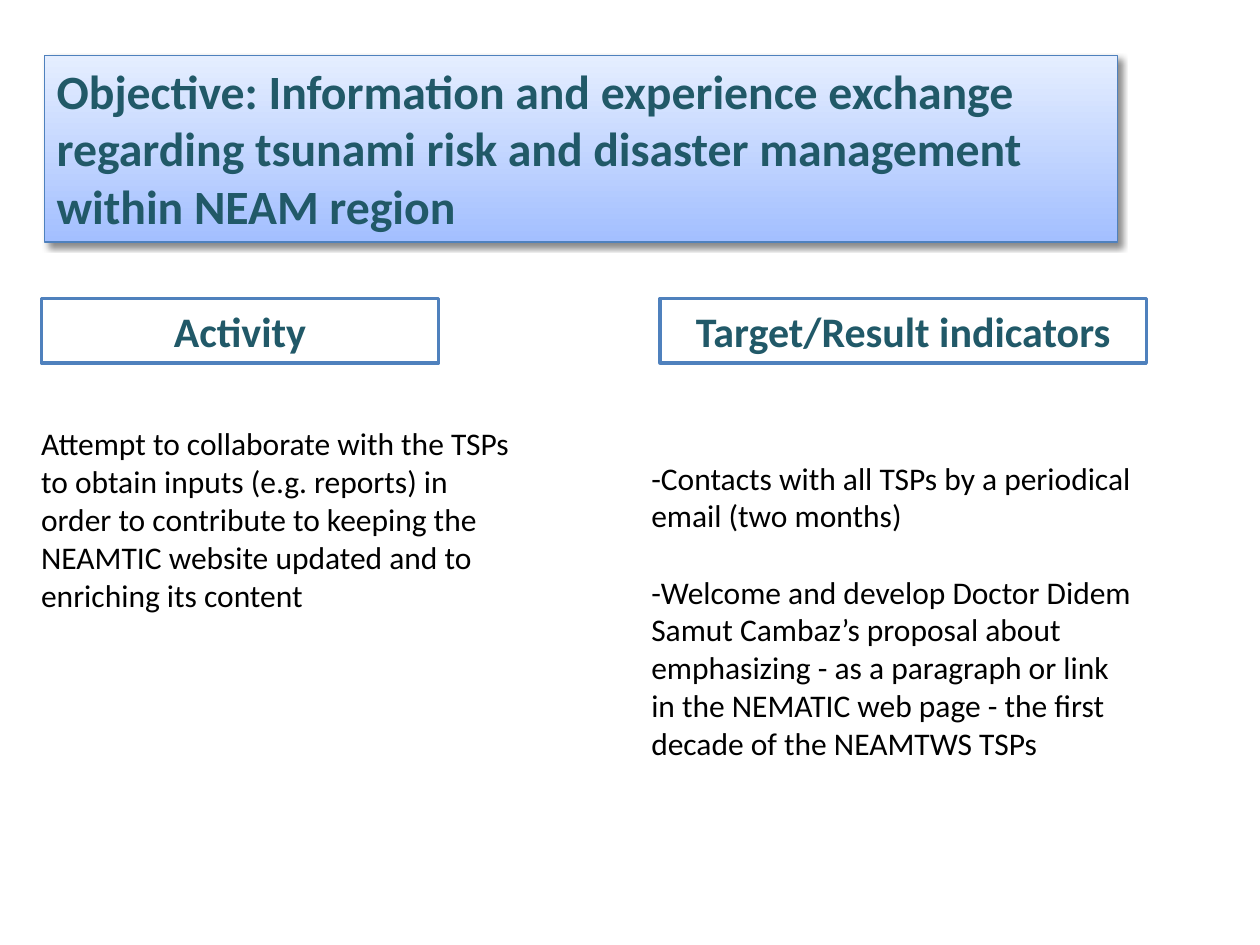
"""Build the objective slide with its activity and target columns."""
from dataclasses import dataclass

from lxml import etree
from pptx import Presentation
from pptx.dml.color import RGBColor
from pptx.enum.shapes import MSO_SHAPE
from pptx.enum.text import MSO_ANCHOR, MSO_AUTO_SIZE, PP_ALIGN
from pptx.oxml import parse_xml
from pptx.util import Cm, Pt

RECTANGLE = MSO_SHAPE.RECTANGLE
TOP = MSO_ANCHOR.TOP
NO_FIT = MSO_AUTO_SIZE.NONE
GROW = MSO_AUTO_SIZE.SHAPE_TO_FIT_TEXT
LEFT = PP_ALIGN.LEFT
CENTER = PP_ALIGN.CENTER
DRAWING = "http://schemas.openxmlformats.org/drawingml/2006/main"


@dataclass(frozen=True)
class Theme:
    font: str = "Calibri"
    teal: RGBColor = RGBColor(0x21, 0x59, 0x68)
    blue: RGBColor = RGBColor(0x4F, 0x81, 0xBD)
    pale: RGBColor = RGBColor(0xE5, 0xEE, 0xFF)
    sky: RGBColor = RGBColor(0xA3, 0xBF, 0xFF)
    white: RGBColor = RGBColor(0xFF, 0xFF, 0xFF)
    black: RGBColor = RGBColor(0x00, 0x00, 0x00)
    title_size: float = 27.3
    heading_size: float = 24
    body_size: float = 18


theme = Theme()


def format_text(box, size, color, bold, align):
    for para in box.text_frame.paragraphs:
        para.alignment = align
        for span in para.runs:
            span.font.name = theme.font
            span.font.size = Pt(size)
            span.font.bold = bold
            span.font.color.rgb = color


deck = Presentation()
deck.slide_width, deck.slide_height = Cm(25.4), Cm(19.05)
page = deck.slides.add_slide(deck.slide_layouts[5])

title = page.shapes.title
title.left, title.top, title.width, title.height = Cm(0.89), Cm(1.12), Cm(21.64), Cm(3.76)
title.fill.gradient()
title.fill.gradient_angle = 270
for stop, color in zip(title.fill.gradient_stops, (theme.pale, theme.sky)):
    stop.color.rgb = color
title.line.color.rgb = theme.blue
title.line.width = Pt(0.75)
shadow = parse_xml(
    f'<a:effectLst xmlns:a="{DRAWING}">'
    '<a:outerShdw blurRad="40000" dist="40000" dir="2700000" rotWithShape="0">'
    '<a:srgbClr val="000000"><a:alpha val="45000"/></a:srgbClr>'
    "</a:outerShdw></a:effectLst>"
)
etree.ElementBase.append(title.element.spPr, shadow)
title.text_frame.text = (
    "Objective: Information and experience exchange regarding tsunami risk "
    "and disaster management within NEAM region"
)
title.text_frame.word_wrap = True
title.text_frame.auto_size = NO_FIT
title.text_frame.vertical_anchor = TOP
format_text(title, theme.title_size, theme.teal, True, LEFT)

headings = [
    ("Activity", 0.84, 8),
    ("Target/Result indicators", 13.31, 9.8),
]
for text, left, width in headings:
    heading = page.shapes.add_shape(RECTANGLE, Cm(left), Cm(6.02), Cm(width), Cm(1.3))
    heading.shadow.inherit = False
    heading.fill.solid()
    heading.fill.fore_color.rgb = theme.white
    heading.line.color.rgb = theme.blue
    heading.line.width = Pt(2)
    heading.text_frame.text = text
    heading.text_frame.word_wrap = True
    format_text(heading, theme.heading_size, theme.teal, True, CENTER)

columns = [
    (
        "Attempt to collaborate with the TSPs to obtain inputs (e.g. reports) in order "
        "to contribute to keeping the NEAMTIC website updated and to enriching its content",
        0.58, 8.43, 10.11, 4.11,
    ),
    (
        "-Contacts with all TSPs by a periodical email (two months)\n"
        "-Welcome and develop Doctor Didem Samut Cambaz’s proposal about emphasizing - "
        "as a paragraph or link in the NEMATIC web page - the first decade of the NEAMTWS TSPs",
        12.88, 9.12, 10.21, 6.4,
    ),
]
for text, *place in columns:
    box = page.shapes.add_textbox(*map(Cm, place))
    box.text_frame.text = text
    box.text_frame.word_wrap = True
    box.text_frame.auto_size = GROW
    format_text(box, theme.body_size, theme.black, False, LEFT)
    for para in box.text_frame.paragraphs[1:]:
        para.space_before = Pt(22)

deck.save("out.pptx")
